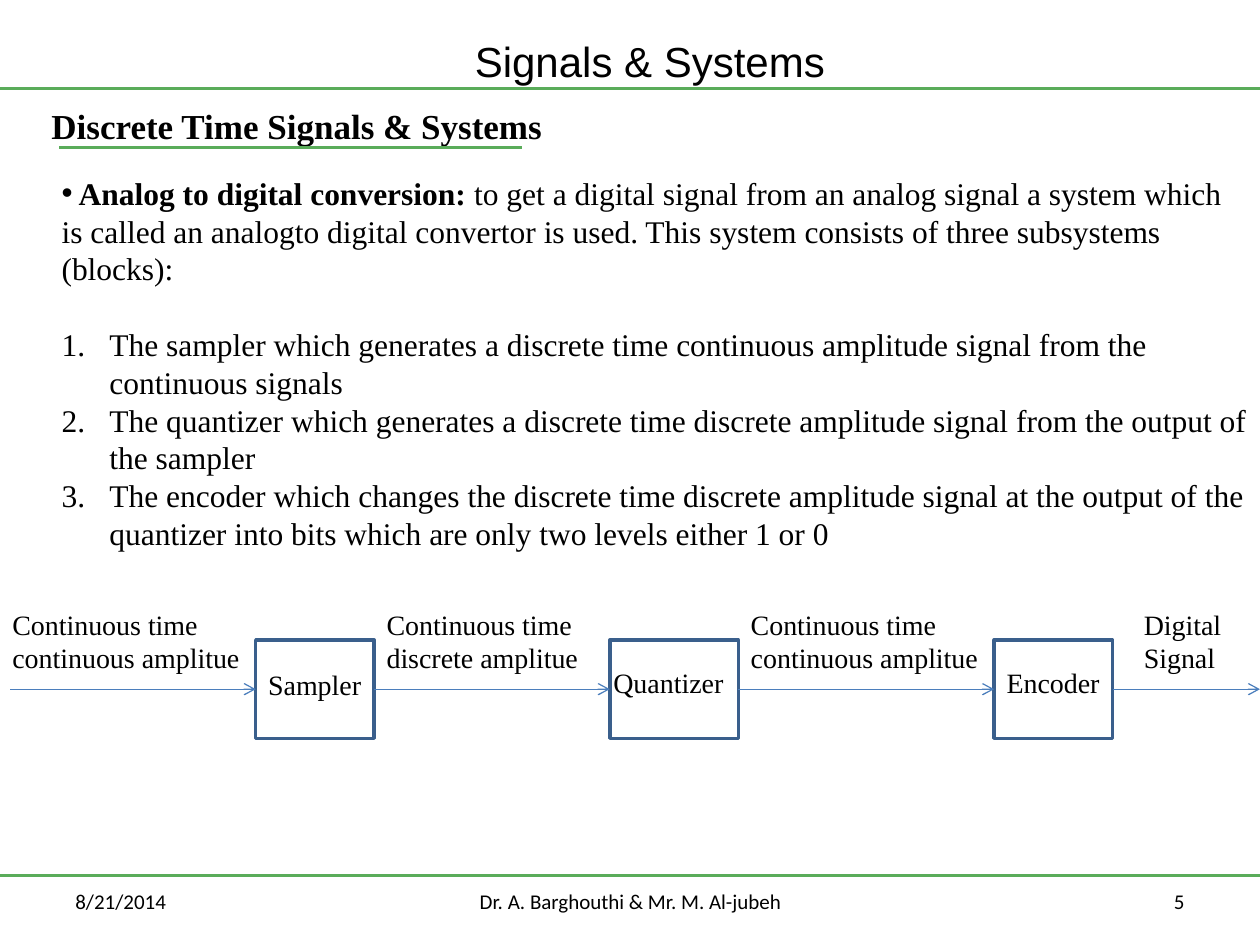
from lxml import etree
from pptx import Presentation
from pptx.dml.color import RGBColor
from pptx.enum.shapes import MSO_CONNECTOR as Link, MSO_SHAPE as Shape
from pptx.enum.text import MSO_ANCHOR as Anchor, PP_ALIGN as Align
from pptx.oxml.ns import qn
from pptx.util import Inches, Pt

BLACK = RGBColor(0, 0, 0)
GREEN = RGBColor(0x5A, 0xAC, 0x5A)
BLUE = RGBColor(0x4B, 0x7E, 0xBC)
NAVY = RGBColor(0x3A, 0x5F, 0x8C)
SERIF = "Times New Roman"


class Page:
    def __init__(self, slide):
        self.shapes = slide.shapes

    def style(self, para, size, face=SERIF, bold=None):
        font = para.font
        font.size, font.name, font.bold = Pt(size), face, bold
        font.color.rgb = BLACK

    def frame(self, left, top, width, height, anchor=Anchor.TOP):
        box = self.shapes.add_textbox(*map(Inches, (left, top, width, height)))
        frame = box.text_frame
        frame.word_wrap = True
        frame.vertical_anchor = anchor
        return frame

    def text(self, words, place, size=16, face=SERIF, bold=None,
             align=Align.LEFT, anchor=Anchor.TOP):
        para = self.frame(*place, anchor).paragraphs[0]
        para.text = words
        para.alignment = align
        self.style(para, size, face, bold)

    def mark(self, para, tag, indent=0, **attrs):
        props = para._p.get_or_add_pPr()
        props.set("marL", str(Inches(indent)))
        props.set("indent", str(-Inches(indent)))
        if tag == "a:buChar":
            etree.SubElement(props, qn("a:buFont"), typeface="Arial")
        etree.SubElement(props, qn(tag), **attrs)

    def line(self, start, end, y, color=GREEN, width=1.5, arrow=False):
        line = self.shapes.add_connector(
            Link.STRAIGHT, *map(Inches, (start, y, end, y)))
        line.line.color.rgb = color
        line.line.width = Pt(width)
        if arrow:
            edge = line._element.spPr.find(qn("a:ln"))
            etree.SubElement(edge, qn("a:tailEnd"), type="arrow")
        etree.SubElement(line._element.spPr, qn("a:effectLst"))

    def block(self, left, width):
        box = self.shapes.add_shape(
            Shape.RECTANGLE, *map(Inches, (left, 5.08, width, 0.78)))
        box.shadow.inherit = False
        box.fill.background()
        box.line.color.rgb = NAVY
        box.line.width = Pt(2)


def main():
    deck = Presentation()
    deck.slide_width, deck.slide_height = Inches(10), Inches(7.5)
    page = Page(deck.slides.add_slide(deck.slide_layouts[6]))

    for y in (0.7, 6.95):
        page.line(10, 0, y)
    page.text("Signals & Systems", (3.67, 0.23, 3.2, 0.5), 24, "Arial")
    page.text("Discrete Time Signals & Systems", (0.31, 0.78, 4.84, 0.63), 20, bold=True)
    page.line(4.14, 0.47, 1.17)

    footer = [
        ("8/21/2014", 0.5, 2.33, Align.LEFT),
        ("Dr. A. Barghouthi & Mr. M. Al-jubeh", 3.42, 3.17, Align.CENTER),
        ("5", 7.17, 2.33, Align.RIGHT),
    ]
    for words, left, width, align in footer:
        page.text(words, (left, 6.95, width, 0.4), 12, "Calibri",
                  align=align, anchor=Anchor.MIDDLE)

    body = page.frame(0.39, 1.33, 9.61, 3.13)
    intro = body.paragraphs[0]
    page.mark(intro, "a:buChar", char="•")
    page.style(intro, 18)
    lead = intro.add_run()
    lead.text = " Analog to digital conversion:"
    lead.font.bold = True
    intro.add_run().text = (
        " to get a digital signal from an analog signal a system which is called "
        "an analogto digital convertor is used. This system consists of three "
        "subsystems (blocks):")
    steps = [
        "The sampler which generates a discrete time continuous amplitude signal "
        "from the continuous signals",
        "The quantizer which generates a discrete time discrete amplitude signal "
        "from the output of the sampler",
        "The encoder which changes the discrete time discrete amplitude signal at "
        "the output of the quantizer into bits which are only two levels either 1 or 0",
    ]
    for i, step in enumerate(steps):
        para = body.add_paragraph()
        para.text = step
        para.space_before = Pt(0 if i else 21.6)
        page.mark(para, "a:buAutoNum", 0.38, type="arabicPeriod")
        page.style(para, 18)

    blocks = [
        ("Sampler", 2.03, 0.94, 2.03, 5.25),
        ("Quantizer", 4.84, 1.02, 4.77, 5.23),
        ("Encoder", 7.89, 0.94, 7.89, 5.23),
    ]
    for name, left, width, x, y in blocks:
        page.block(left, width)
        page.text(name, (x, y, 1.3, 0.37))

    signals = [
        ("Continuous time continuous amplitue", 0, 2.34, 0.08, 2.03),
        ("Continuous time discrete amplitue", 2.97, 2.27, 2.97, 4.84),
        ("Continuous time continuous amplitue", 5.86, 2.19, 5.86, 7.89),
        ("Digital Signal", 8.98, 1.33, 8.83, 10),
    ]
    for words, left, width, start, end in signals:
        page.line(start, end, 5.47, BLUE, 0.75, True)
        page.text(words, (left, 4.77, width, 0.64))

    deck.save("out.pptx")


if __name__ == "__main__":
    main()
